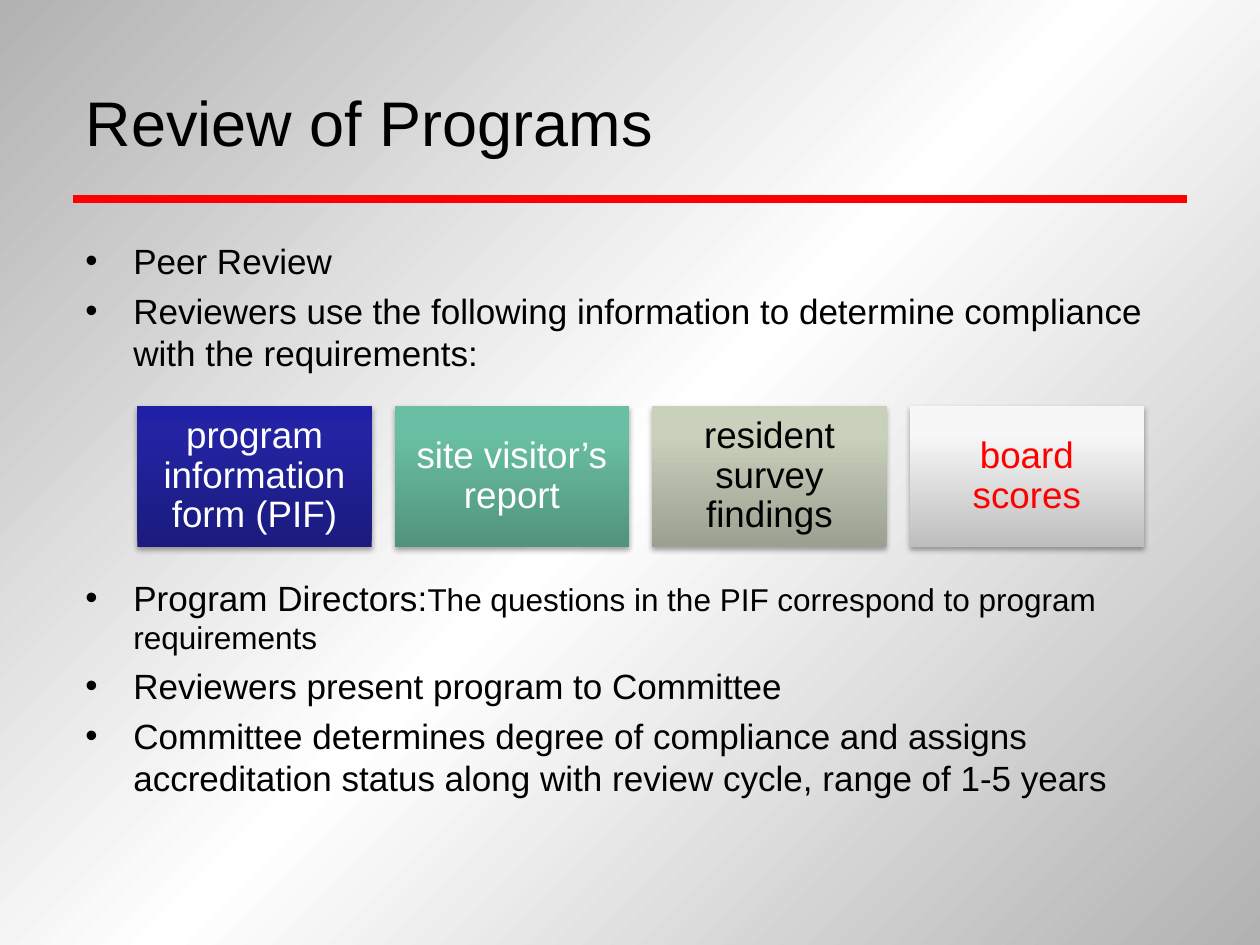
import pptx
import pptx.util
import pptx.oxml
import pptx.oxml.ns
import pptx.dml.color
import pptx.enum.text
import pptx.enum.shapes

Inches = pptx.util.Inches
Pt = pptx.util.Pt
RGBColor = pptx.dml.color.RGBColor
Anchor = pptx.enum.text.MSO_ANCHOR
Align = pptx.enum.text.PP_ALIGN
qn = pptx.oxml.ns.qn
DRAWING_NS = pptx.oxml.ns.nsdecls("a")

FONT = "Arial"
BLACK = RGBColor(0x00, 0x00, 0x00)
WHITE = RGBColor(0xFF, 0xFF, 0xFF)
RED = RGBColor(0xFF, 0x00, 0x00)
GREY = RGBColor(0xB2, 0xB2, 0xB2)

# Each card: text, text colour, gradient colours from bottom to top
CARDS = [
    ("program information form (PIF)", WHITE,
     (RGBColor(0x1B, 0x1B, 0x7E), RGBColor(0x23, 0x23, 0xA3), RGBColor(0x20, 0x20, 0xA6))),
    ("site visitor’s report", WHITE,
     (RGBColor(0x51, 0x93, 0x7D), RGBColor(0x69, 0xBF, 0xA3), RGBColor(0x68, 0xC2, 0xA4))),
    ("resident survey findings", BLACK,
     (RGBColor(0x9B, 0xA0, 0x90), RGBColor(0xC9, 0xD0, 0xBB), RGBColor(0xCA, 0xD2, 0xBB))),
    ("board scores", RED,
     (RGBColor(0xBE, 0xBE, 0xBE), RGBColor(0xF7, 0xF7, 0xF7), RGBColor(0xF8, 0xF8, 0xF8))),
]

# Each bullet: space before in points, then its spans as (text, size)
BULLETS = [
    (0, [("Peer Review", 20)]),
    (4.6, [("Reviewers use the following information to determine compliance "
            "with the requirements:", 20)]),
    (116, [("Program Directors:", 20),
           ("The questions in the PIF correspond to program requirements", 18)]),
    (4.6, [("Reviewers present program to Committee", 20)]),
    (4.6, [("Committee determines degree of compliance and assigns accreditation "
            "status along with review cycle, range of 1-5 years", 20)]),
]


def style_font(font, size, color):
    font.name = FONT
    font.size = Pt(size)
    font.color.rgb = color


def set_gradient(fill, owner, positions, colors, angle):
    """Fill with several stops; angle is in degrees clockwise."""
    fill.gradient()
    gradient = owner.find(".//" + qn("a:gradFill"))
    stops = "".join(
        f'<a:gs pos="{position * 1000}"><a:srgbClr val="{color}"/></a:gs>'
        for position, color in zip(positions, colors))
    gradient.getparent().replace(gradient, pptx.oxml.parse_xml(
        f'<a:gradFill {DRAWING_NS} rotWithShape="1"><a:gsLst>{stops}</a:gsLst>'
        f'<a:lin ang="{angle * 60000}" scaled="0"/></a:gradFill>'))


def add_background(page):
    set_gradient(page.background.fill, page.element, (0, 50, 100),
                 (GREY, WHITE, GREY), 45)


def add_title(page, left, top, width, height):
    title = page.shapes.title
    title.left, title.top, title.width, title.height = left, top, width, height
    frame = title.text_frame
    frame.text = "Review of Programs"
    frame.vertical_anchor = Anchor.MIDDLE
    frame.paragraphs[0].alignment = Align.LEFT
    style_font(frame.paragraphs[0].runs[0].font, 36, BLACK)


def add_rule(page, left, top, width):
    rule = page.shapes.add_connector(
        pptx.enum.shapes.MSO_CONNECTOR.STRAIGHT, left, top, left + width, top)
    rule.line.color.rgb = RED
    rule.line.width = Pt(5)
    rule.element.spPr.append(pptx.oxml.parse_xml(f"<a:effectLst {DRAWING_NS}/>"))


def add_bullets(page, left, top, width, height):
    box = page.shapes.add_textbox(left, top, width, height)
    frame = box.text_frame
    frame.word_wrap = True
    for index, (space, spans) in enumerate(BULLETS):
        para = frame.paragraphs[0] if index == 0 else frame.add_paragraph()
        para.space_before = Pt(space)
        properties = para._p.get_or_add_pPr()
        properties.set("marL", str(Inches(0.38)))
        properties.set("indent", str(-Inches(0.38)))
        properties.append(pptx.oxml.parse_xml(
            f'<a:buFont {DRAWING_NS} typeface="{FONT}"/>'))
        properties.append(pptx.oxml.parse_xml(f'<a:buChar {DRAWING_NS} char="•"/>'))
        for text, size in spans:
            span = para.add_run()
            span.text = text
            style_font(span.font, size, BLACK)


def add_card(page, left, top, width, height, text, text_color, colors):
    card = page.shapes.add_shape(
        pptx.enum.shapes.MSO_SHAPE.RECTANGLE, left, top, width, height)
    set_gradient(card.fill, card.element.spPr, (0, 80, 100), colors, 270)
    card.line.fill.background()

    # Soft shadow straight below
    card.shadow.inherit = False
    card.element.spPr.find(qn("a:effectLst")).append(pptx.oxml.parse_xml(
        f'<a:outerShdw {DRAWING_NS} blurRad="{Pt(3.1)}" dist="{Pt(1.8)}" '
        'dir="5400000" rotWithShape="0"><a:srgbClr val="000000">'
        '<a:alpha val="35000"/></a:srgbClr></a:outerShdw>'))

    frame = card.text_frame
    frame.word_wrap = True
    frame.vertical_anchor = Anchor.MIDDLE
    frame.margin_left = frame.margin_right = Inches(0.09)
    frame.margin_top = frame.margin_bottom = Inches(0.09)
    frame.text = text
    para = frame.paragraphs[0]
    para.alignment = Align.CENTER
    para.line_spacing = 0.9
    style_font(para.runs[0].font, 21, text_color)


def add_cards(page, left, top, width, height):
    card_width = Inches(1.86)
    step = (width - card_width) // (len(CARDS) - 1)
    for index, card in enumerate(CARDS):
        add_card(page, left + index * step, top, card_width, height, *card)


def main():
    deck = pptx.Presentation()
    deck.slide_width, deck.slide_height = Inches(10), Inches(7.5)
    page = deck.slides.add_slide(deck.slide_layouts[5])
    left = Inches(0.58)
    add_background(page)
    add_rule(page, left, Inches(1.58), Inches(8.84))
    add_title(page, left, Inches(0.42), Inches(9), Inches(1.08))
    add_bullets(page, left, Inches(1.85), Inches(9), Inches(4.95))
    add_cards(page, Inches(1.09), Inches(3.22), Inches(7.99), Inches(1.12))
    deck.save("out.pptx")


if __name__ == "__main__":
    main()
